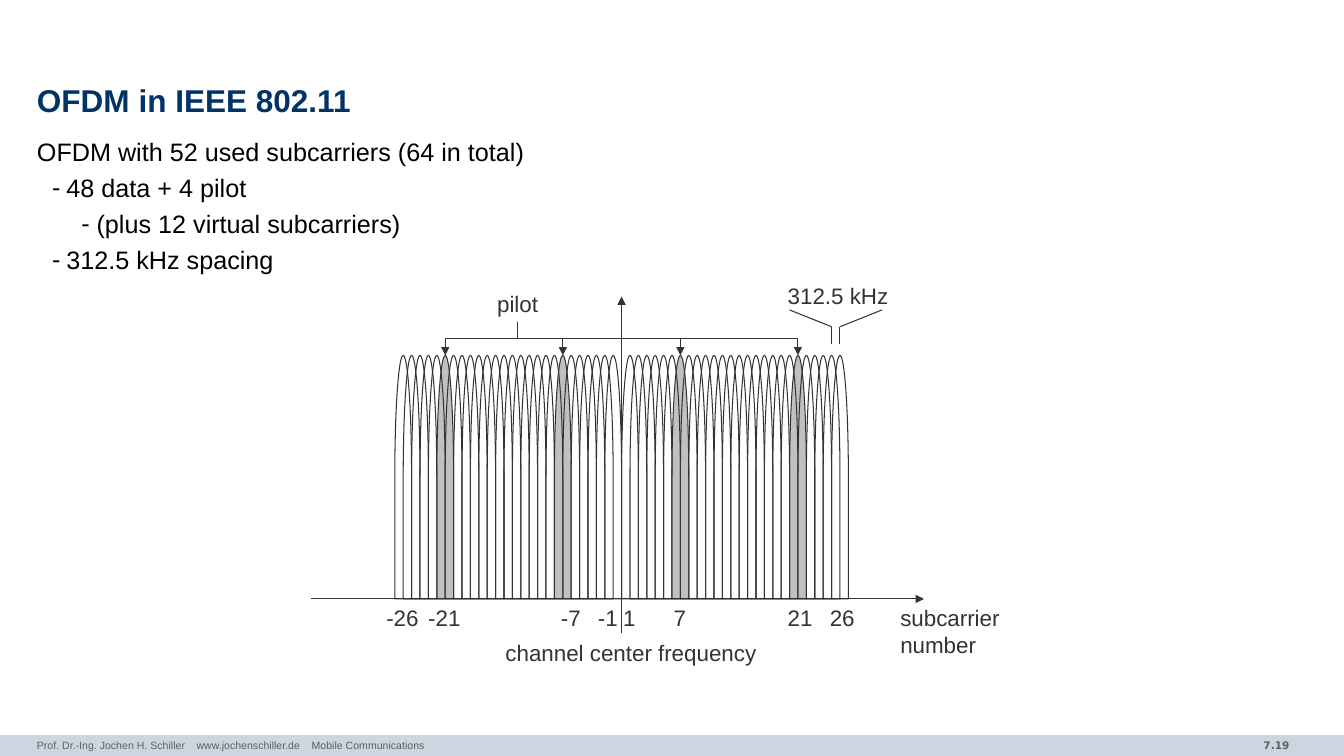
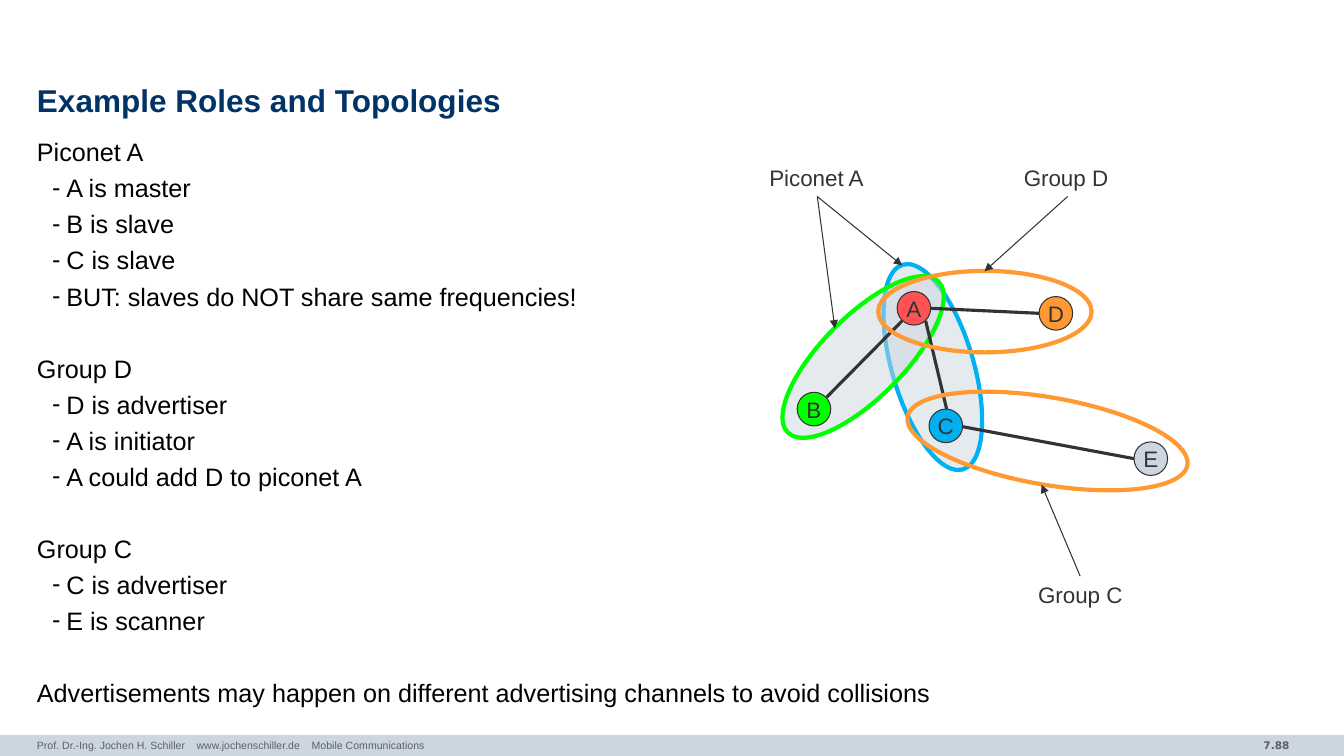
from dataclasses import dataclass
from typing import Any, NamedTuple, Optional

from lxml.etree import SubElement
from pptx import Presentation
from pptx.dml.color import RGBColor
from pptx.enum.shapes import MSO_CONNECTOR as Link, MSO_SHAPE as Preset
from pptx.enum.text import MSO_ANCHOR as Anchor, MSO_AUTO_SIZE as AutoSize, PP_ALIGN as Align
from pptx.oxml.ns import qn
from pptx.util import Emu, Pt

EMU_PER_PX = 7620  # 120 px to the inch


def px(length: float) -> Emu:
    return Emu(round(length * EMU_PER_PX))


# Theme: colours and type sizes
@dataclass(frozen=True)
class Theme:
    font: str = "Arial"
    number_font: str = "DejaVu Sans"
    navy: str = "003366"
    black: str = "000000"
    ink: str = "333333"
    grey: str = "5F5F5F"
    pilot: str = "C0C0C0"
    mist: str = "CCD6E0"
    red: str = "FF5353"
    green: str = "00FF00"
    orange: str = "FF9933"
    blue: str = "00B0F0"
    title_size: float = 22.5
    body_size: float = 18
    label_size: float = 16
    footer_size: float = 7.5
    thin: float = 0.75
    medium: float = 2.25
    thick: float = 3


THEME = Theme()


class Box(NamedTuple):
    left: int
    top: int
    width: int
    height: int


class Label(NamedTuple):
    text: str
    box: Box


class Line(NamedTuple):
    x1: int
    y1: int
    x2: int
    y2: int
    arrow: bool = False
    weight: float = THEME.thin


class Item(NamedTuple):
    text: str
    level: int = 0
    new_group: bool = False


class Node(NamedTuple):
    letter: str
    left: int
    top: int
    color: str


class Group(NamedTuple):
    box: Box
    rotation: float
    outline: str
    fill: Optional[str] = None


# Shared layout
SLIDE_WIDTH, SLIDE_HEIGHT = 1600, 900
BAND = Box(0, 875, SLIDE_WIDTH, 25)
TITLE = Box(44, 94, 1512, 56)
BODY = Box(44, 162, 1512, 689)
FOOTER = Box(44, 874, 1046, 26)
PAGE_NUMBER = Box(1332, 874, 215, 28)
FOOTER_PARTS = ("Prof. Dr.-Ing. Jochen H. Schiller", "www.jochenschiller.de", "Mobile Communications")
FOOTER_TABS = (190, 327)
INDENTS = ((0, 0), (35, -17), (71, -18))  # left margin and first-line indent by level
ITEM_GAP, GROUP_GAP = 3.7, 29.4
LABEL_HEIGHT = 44


def apply(target: Any, values: dict[str, Any]) -> None:
    for name, value in values.items():
        setattr(target, name, value)


def place(shape: Any, box: Box) -> None:
    apply(shape, {side: px(length) for side, length in box._asdict().items()})


def inset(frame: Any, side: int, end: int) -> None:
    apply(frame, {"margin_left": px(side), "margin_right": px(side),
                  "margin_top": px(end), "margin_bottom": px(end)})


def write(paragraph: Any, text: str, size: float, color: str,
          bold: bool = False, name: str = THEME.font) -> None:
    run = paragraph.add_run()
    run.text = text
    apply(run.font, {"name": name, "size": Pt(size), "bold": bold})
    run.font.color.rgb = RGBColor.from_string(color)


def add_preset(slide: Any, preset: Any, box: Box, fill: Optional[str] = None,
               outline: Optional[str] = None, weight: float = THEME.thin, rotation: float = 0) -> Any:
    shape = slide.shapes.add_shape(preset, *map(px, box))
    shape.shadow.inherit = False
    shape.rotation = rotation
    if fill:
        shape.fill.solid()
        shape.fill.fore_color.rgb = RGBColor.from_string(fill)
    else:
        shape.fill.background()
    if outline:
        shape.line.color.rgb = RGBColor.from_string(outline)
        shape.line.width = Pt(weight)
    else:
        shape.line.fill.background()
    return shape


def style_connector(connector: Any, weight: float, arrow: bool) -> None:
    connector.line.color.rgb = RGBColor.from_string(THEME.ink)
    connector.line.width = Pt(weight)
    properties = connector._element.spPr
    if arrow:
        SubElement(properties.find(qn("a:ln")), qn("a:tailEnd"), type="triangle")
    SubElement(properties, qn("a:effectLst"))


def add_line(slide: Any, line: Line) -> None:
    ends = map(px, (line.x1, line.y1, line.x2, line.y2))
    style_connector(slide.shapes.add_connector(Link.STRAIGHT, *ends), line.weight, line.arrow)


def add_drop_arrow(slide: Any, x1: int, y1: int, x2: int, y2: int) -> None:
    """Elbow arrow that leaves and arrives vertically: a turned horizontal elbow."""
    to_left = x2 < x1
    mid_x, mid_y = (x1 + x2) / 2, (y1 + y2) / 2
    half_run = (y2 - y1) / 2 * (1 if to_left else -1)
    half_rise = abs(x2 - x1) / 2
    elbow = slide.shapes.add_connector(
        Link.ELBOW, px(mid_x - half_run), px(mid_y - half_rise),
        px(mid_x + half_run), px(mid_y + half_rise))
    turn = 90 if to_left else 270
    elbow._element.spPr.find(qn("a:xfrm")).set("rot", str(turn * 60000))
    style_connector(elbow, THEME.thin, True)


def add_label(slide: Any, label: Label) -> None:
    frame = slide.shapes.add_textbox(*map(px, label.box)).text_frame
    apply(frame, {"word_wrap": False, "auto_size": AutoSize.SHAPE_TO_FIT_TEXT})
    for index, text in enumerate(label.text.split("\n")):
        paragraph = frame.add_paragraph() if index else frame.paragraphs[0]
        write(paragraph, text, THEME.label_size, THEME.ink)


def add_items(body: Any, items: list[Item]) -> None:
    place(body, BODY)
    frame = body.text_frame
    apply(frame, {"word_wrap": True, "auto_size": AutoSize.NONE, "vertical_anchor": Anchor.TOP})
    inset(frame, 0, 0)
    for index, item in enumerate(items):
        paragraph = frame.add_paragraph() if index else frame.paragraphs[0]
        properties = paragraph._p.get_or_add_pPr()
        margin, indent = INDENTS[item.level]
        properties.set("marL", str(px(margin)))
        properties.set("indent", str(px(indent)))
        if item.level:
            SubElement(SubElement(properties, qn("a:buClr")), qn("a:srgbClr"), val=THEME.black)
            SubElement(properties, qn("a:buChar"), char="-")
        else:
            SubElement(properties, qn("a:buNone"))
        gap = GROUP_GAP if item.new_group else ITEM_GAP
        apply(paragraph, {"level": item.level, "line_spacing": 1.02, "alignment": Align.LEFT,
                          "space_before": Pt(gap if index else 0), "space_after": Pt(0)})
        write(paragraph, item.text, THEME.body_size, THEME.black)


def add_footer(slide: Any, number: str) -> None:
    add_preset(slide, Preset.RECTANGLE, BAND, THEME.mist)
    page = slide.shapes.add_textbox(*map(px, PAGE_NUMBER)).text_frame
    page.word_wrap = True
    page.paragraphs[0].alignment = Align.RIGHT
    write(page.paragraphs[0], number, THEME.footer_size, THEME.grey, True, THEME.number_font)
    credit = slide.shapes.add_textbox(*map(px, FOOTER)).text_frame
    credit.word_wrap = True
    inset(credit, 0, 6)
    paragraph = credit.paragraphs[0]
    tabs = SubElement(paragraph._p.get_or_add_pPr(), qn("a:tabLst"))
    for stop in FOOTER_TABS:
        SubElement(tabs, qn("a:tab"), pos=str(px(stop)), algn="l")
    write(paragraph, "\t".join(FOOTER_PARTS), THEME.footer_size, THEME.grey)


def start_slide(deck: Any, heading: str, number: str, items: list[Item]) -> Any:
    slide = deck.slides.add_slide(deck.slide_layouts[1])
    add_footer(slide, number)
    title = slide.shapes.title
    place(title, TITLE)
    frame = title.text_frame
    apply(frame, {"word_wrap": True, "auto_size": AutoSize.NONE, "vertical_anchor": Anchor.MIDDLE})
    inset(frame, 0, 0)
    apply(frame.paragraphs[0], {"alignment": Align.LEFT, "line_spacing": 0.85})
    write(frame.paragraphs[0], heading, THEME.title_size, THEME.navy, True)
    add_items(slide.placeholders[1], items)
    return slide


# OFDM spectrum
CENTER_X, AXIS_Y, SPACING = 740, 713, 10
LOBE_LENGTH, LOBE_WIDTH = 290, 20
PILOTS = (-21, -7, 7, 21)
OUTERMOST = 26


def carrier_x(number: int) -> int:
    return CENTER_X + number * SPACING


def add_subcarrier(slide: Any, number: int) -> None:
    middle_y = AXIS_Y - LOBE_LENGTH // 2
    lobe = Box(carrier_x(number) - LOBE_LENGTH // 2, middle_y - LOBE_WIDTH // 2, LOBE_LENGTH, LOBE_WIDTH)
    fill = THEME.pilot if number in PILOTS else None
    add_preset(slide, Preset.FLOWCHART_DELAY, lobe, fill, THEME.ink, rotation=270)


def build_ofdm(deck: Any) -> None:
    slide = start_slide(deck, "OFDM in IEEE 802.11", "7.19", [
        Item("OFDM with 52 used subcarriers (64 in total)"),
        Item("48 data + 4 pilot", 1),
        Item("(plus 12 virtual subcarriers)", 2),
        Item("312.5 kHz spacing", 1)])
    carriers = [n for n in range(-OUTERMOST, OUTERMOST + 1) if n]
    for number in sorted(carriers, key=lambda n: n not in PILOTS):  # pilots at the back
        add_subcarrier(slide, number)
    # Axes and spacing marks
    add_line(slide, Line(370, AXIS_Y, 1100, AXIS_Y, True))
    add_line(slide, Line(CENTER_X, 754, CENTER_X, 353, True))
    for number, outward in ((25, -50), (26, 50)):
        x = carrier_x(number)
        add_line(slide, Line(x, 389, x, 409))
        add_line(slide, Line(x, 389, x + outward, 369))
    for number in PILOTS:
        add_drop_arrow(slide, 616, 383, carrier_x(number), 423)
    # Labels
    for text, left, width in (("-26", 448, 66), ("-21", 498, 66), ("-7", 656, 50), ("-1", 700, 50),
                              ("1", 730, 40), ("7", 790, 40), ("21", 926, 56), ("26", 976, 56)):
        add_label(slide, Label(text, Box(left, AXIS_Y, width, LABEL_HEIGHT)))
    for label in (Label("subcarrier\nnumber", Box(1060, AXIS_Y, 146, 77)),
                  Label("channel center frequency", Box(590, 755, 326, LABEL_HEIGHT)),
                  Label("312.5 kHz", Box(926, 330, 146, LABEL_HEIGHT)),
                  Label("pilot", Box(580, 340, 76, LABEL_HEIGHT))):
        add_label(slide, label)


# Piconet topology
NODE_SIZE = 40
PICONETS = (Group(Box(1062, 310, 97, 254), 343.6, THEME.blue, THEME.mist),
            Group(Box(979, 298, 97, 254), 44.9, THEME.green, THEME.mist))
ADVERTISING = (Group(Box(1124, 244, 97, 254), 90, THEME.orange),
               Group(Box(1195, 356, 104, 338), 99.8, THEME.orange))
NODES = (Node("A", 1068, 347, THEME.red), Node("B", 949, 467, THEME.green),
         Node("D", 1237, 353, THEME.orange), Node("C", 1106, 487, THEME.blue),
         Node("E", 1350, 526, THEME.mist))
RADIO_LINKS = ((1074, 382, 984, 473), (1108, 367, 1237, 373),
               (1127, 487, 1102, 382), (1350, 546, 1146, 508))
POINTERS = ((973, 234, 994, 391), (973, 234, 1074, 316),
            (1271, 234, 1172, 323), (1286, 686, 1240, 577))


def add_group(slide: Any, group: Group) -> None:
    ring = add_preset(slide, Preset.OVAL, group.box, group.fill, group.outline, THEME.thick, group.rotation)
    if group.fill:
        color = ring._element.spPr.find(qn("a:solidFill")).find(qn("a:srgbClr"))
        SubElement(color, qn("a:alpha"), val="50000")


def add_node(slide: Any, node: Node) -> None:
    box = Box(node.left, node.top, NODE_SIZE, NODE_SIZE)
    frame = add_preset(slide, Preset.OVAL, box, node.color, THEME.ink).text_frame
    apply(frame, {"word_wrap": False, "vertical_anchor": Anchor.MIDDLE})
    frame.paragraphs[0].alignment = Align.CENTER
    write(frame.paragraphs[0], node.letter, THEME.label_size, THEME.ink)


def build_topologies(deck: Any) -> None:
    slide = start_slide(deck, "Example Roles and Topologies", "7.88", [
        Item("Piconet A"), Item("A is master", 1), Item("B is slave", 1), Item("C is slave", 1),
        Item("BUT: slaves do NOT share same frequencies!", 1),
        Item("Group D", new_group=True), Item("D is advertiser", 1), Item("A is initiator", 1),
        Item("A could add D to piconet A", 1),
        Item("Group C", new_group=True), Item("C is advertiser", 1), Item("E is scanner", 1),
        Item("Advertisements may happen on different advertising channels to avoid collisions",
             new_group=True)])
    for group in PICONETS:
        add_group(slide, group)
    for node in NODES:
        add_node(slide, node)
    for ends in RADIO_LINKS:
        add_line(slide, Line(*ends, weight=THEME.medium))
    for group in ADVERTISING:
        add_group(slide, group)
    for ends in POINTERS:
        add_line(slide, Line(*ends, arrow=True))
    for text, left, top, width in (("Piconet A", 904, 190, 140), ("Group D", 1207, 190, 128),
                                   ("Group C", 1224, 686, 128)):
        add_label(slide, Label(text, Box(left, top, width, LABEL_HEIGHT)))


def main() -> None:
    deck = Presentation()
    apply(deck, {"slide_width": px(SLIDE_WIDTH), "slide_height": px(SLIDE_HEIGHT)})
    build_ofdm(deck)
    build_topologies(deck)
    deck.save("out.pptx")


if __name__ == "__main__":
    main()
